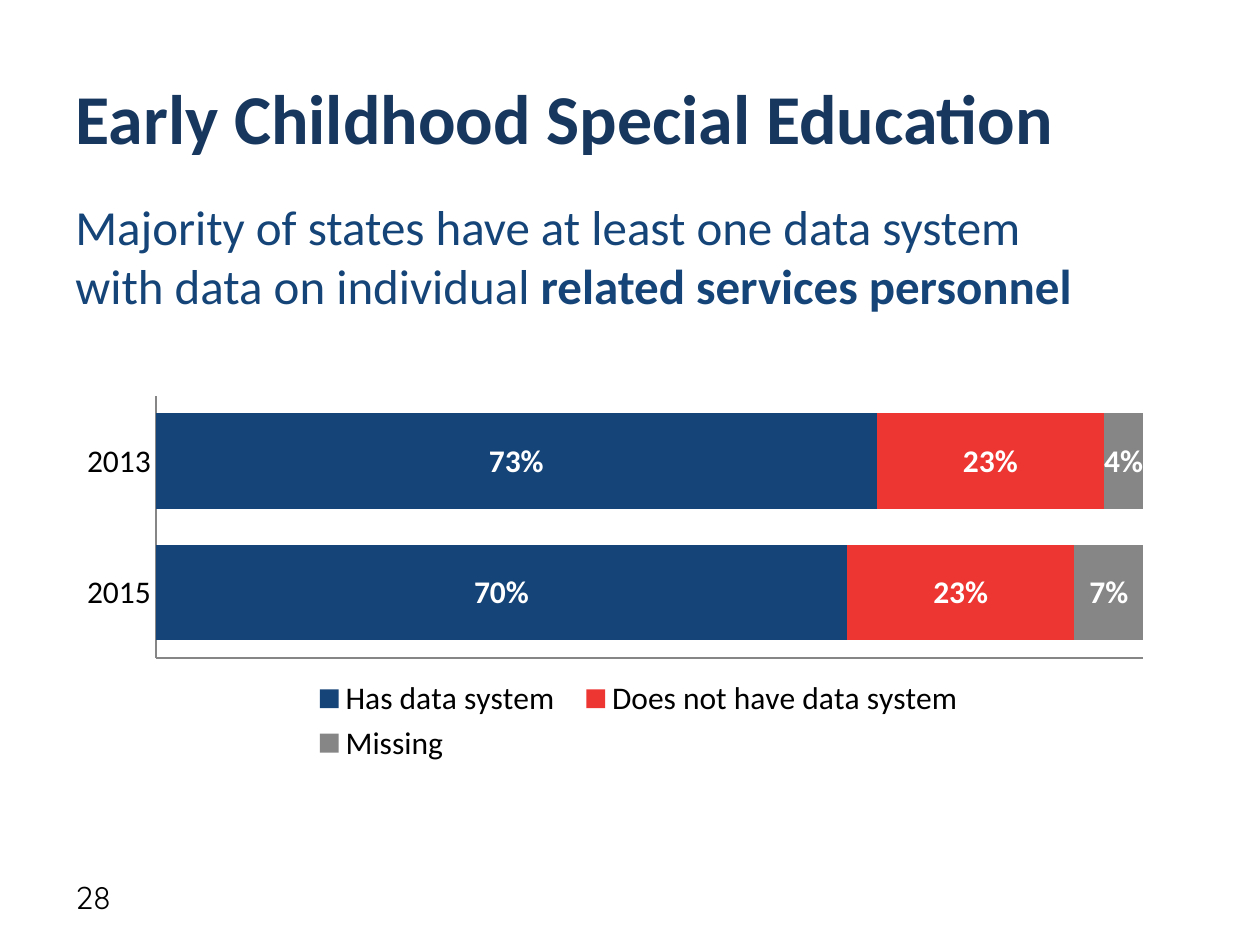
import dataclasses

import pptx
import pptx.chart.data
import pptx.dml.color
import pptx.enum.chart
import pptx.enum.text
import pptx.oxml
import pptx.oxml.ns
import pptx.util
from pptx.util import Inches


@dataclasses.dataclass(frozen=True)
class Theme:
    font: str = "Calibri"
    number_font: str = "Quicksand"
    title: str = "17375E"
    blue: str = "154578"
    red: str = "ED3532"
    gray: str = "868687"
    black: str = "000000"
    white: str = "FFFFFF"
    title_size: int = 40
    lead_size: int = 28
    small_size: int = 18


THEME = Theme()
CHART_BOX = (0.54, 3.08, 8.71, 3.02)
PLOT_BOX = (1.26, 3.14, 7.82, 2.07)
LEGEND_BOX = (2.33, 5.34, 5.4, 0.75)
CATEGORIES = ("2015", "2013")
SERIES = (
    ("Has data system", (0.7, 0.73), THEME.blue),
    ("Does not have data system", (0.23, 0.23), THEME.red),
    ("Missing", (0.07, 0.04), THEME.gray),
)


def rgb(color):
    return pptx.dml.color.RGBColor.from_string(color)


def set_values(target, values):
    for name, value in values.items():
        setattr(target, name, value)


def format_font(font, size, color, name=THEME.font, bold=False):
    set_values(font, {"size": pptx.util.Pt(size), "name": name, "bold": bold})
    font.color.rgb = rgb(color)


def place(shape, box):
    names = ("left", "top", "width", "height")
    set_values(shape, dict(zip(names, map(Inches, box))))


def add_run(paragraph, text, size, color, **options):
    run = paragraph.add_run()
    run.text = text
    format_font(run.font, size, color, **options)


def add_title(slide, text):
    title = slide.shapes.title
    place(title, (0.5, 0.3, 9, 1.25))
    set_values(title.text_frame, {
        "word_wrap": True,
        "vertical_anchor": pptx.enum.text.MSO_ANCHOR.MIDDLE,
    })
    paragraph = title.text_frame.paragraphs[0]
    paragraph.alignment = pptx.enum.text.PP_ALIGN.LEFT
    add_run(paragraph, text, THEME.title_size, THEME.title, bold=True)


def add_text(slide, box, **frame_values):
    """Add a wrapping text box and return its first paragraph."""
    frame = slide.shapes.add_textbox(*map(Inches, box)).text_frame
    set_values(frame, {"word_wrap": True, **frame_values})
    return frame.paragraphs[0]


def set_layout(element, box, position, inner=False):
    """Fix a chart part at a box given in inches on the slide."""
    for old in element.findall(pptx.oxml.ns.qn("c:layout")):
        element.remove(old)
    left, top, width, height = CHART_BOX
    fractions = {
        "x": (box[0] - left) / width,
        "y": (box[1] - top) / height,
        "w": box[2] / width,
        "h": box[3] / height,
    }
    target = '<c:layoutTarget val="inner"/>' if inner else ""
    modes = "".join(f'<c:{key}Mode val="edge"/>' for key in "xy")
    sizes = "".join(f'<c:{key} val="{value:.2f}"/>' for key, value in fractions.items())
    element.insert(position, pptx.oxml.parse_xml(
        f'<c:layout {pptx.oxml.ns.nsdecls("c")}><c:manualLayout>'
        f"{target}{modes}{sizes}</c:manualLayout></c:layout>"))


def format_axes(chart):
    none = pptx.enum.chart.XL_TICK_MARK.NONE
    for axis in (chart.category_axis, chart.value_axis):
        set_values(axis, {
            "major_tick_mark": none,
            "minor_tick_mark": none,
            "has_major_gridlines": False,
        })
        axis.format.line.color.rgb = rgb(THEME.gray)
        axis.format.line.width = pptx.util.Pt(0.75)
    set_values(chart.value_axis, {
        "minimum_scale": 0,
        "maximum_scale": 1,
        "major_unit": 0.2,
        "tick_label_position": pptx.enum.chart.XL_TICK_LABEL_POSITION.NONE,
    })


def format_series(series, color):
    series.format.fill.solid()
    series.format.fill.fore_color.rgb = rgb(color)
    labels = series.data_labels
    set_values(labels, {
        "show_value": True,
        "number_format": "0%",
        "number_format_is_linked": False,
        "position": pptx.enum.chart.XL_LABEL_POSITION.CENTER,
    })
    format_font(labels.font, THEME.small_size, THEME.white, bold=True)


def add_stacked_chart(slide):
    data = pptx.chart.data.CategoryChartData(number_format="0%")
    data.categories = CATEGORIES
    for name, values, _ in SERIES:
        data.add_series(name, values)
    chart = slide.shapes.add_chart(
        pptx.enum.chart.XL_CHART_TYPE.BAR_STACKED, *map(Inches, CHART_BOX), data).chart
    set_values(chart, {"has_title": False, "has_legend": True})
    format_font(chart.font, THEME.small_size, THEME.black)
    plot = chart.plots[0]
    set_values(plot, {"gap_width": 37, "overlap": 100, "vary_by_categories": False})
    for series, (_, _, color) in zip(plot.series, SERIES):
        format_series(series, color)
    format_axes(chart)

    # Legend and fixed chart areas
    set_values(chart.legend, {
        "position": pptx.enum.chart.XL_LEGEND_POSITION.BOTTOM,
        "include_in_layout": False,
    })
    plot_area = chart.element.find(".//" + pptx.oxml.ns.qn("c:plotArea"))
    legend = chart.element.find(".//" + pptx.oxml.ns.qn("c:legend"))
    set_layout(plot_area, PLOT_BOX, 0, inner=True)
    set_layout(legend, LEGEND_BOX, 1)


def main():
    presentation = pptx.Presentation()
    set_values(presentation, {"slide_width": Inches(10), "slide_height": Inches(7.5)})
    slide = presentation.slides.add_slide(presentation.slide_layouts.get_by_name("Title Only"))

    # Heading and lead sentence
    add_title(slide, "Early Childhood Special Education")
    lead = add_text(slide, (0.5, 1.51, 8.33, 1.04),
                    auto_size=pptx.enum.text.MSO_AUTO_SIZE.SHAPE_TO_FIT_TEXT)
    add_run(lead, "Majority of states have at least one data system with data on individual ",
            THEME.lead_size, THEME.blue)
    add_run(lead, "related services personnel", THEME.lead_size, THEME.blue, bold=True)

    # Chart
    add_stacked_chart(slide)

    # Slide number
    number = add_text(slide, (0.5, 6.92, 2.33, 0.4),
                      vertical_anchor=pptx.enum.text.MSO_ANCHOR.MIDDLE)
    add_run(number, "28", THEME.small_size, THEME.black, name=THEME.number_font)

    presentation.save("out.pptx")


if __name__ == "__main__":
    main()
